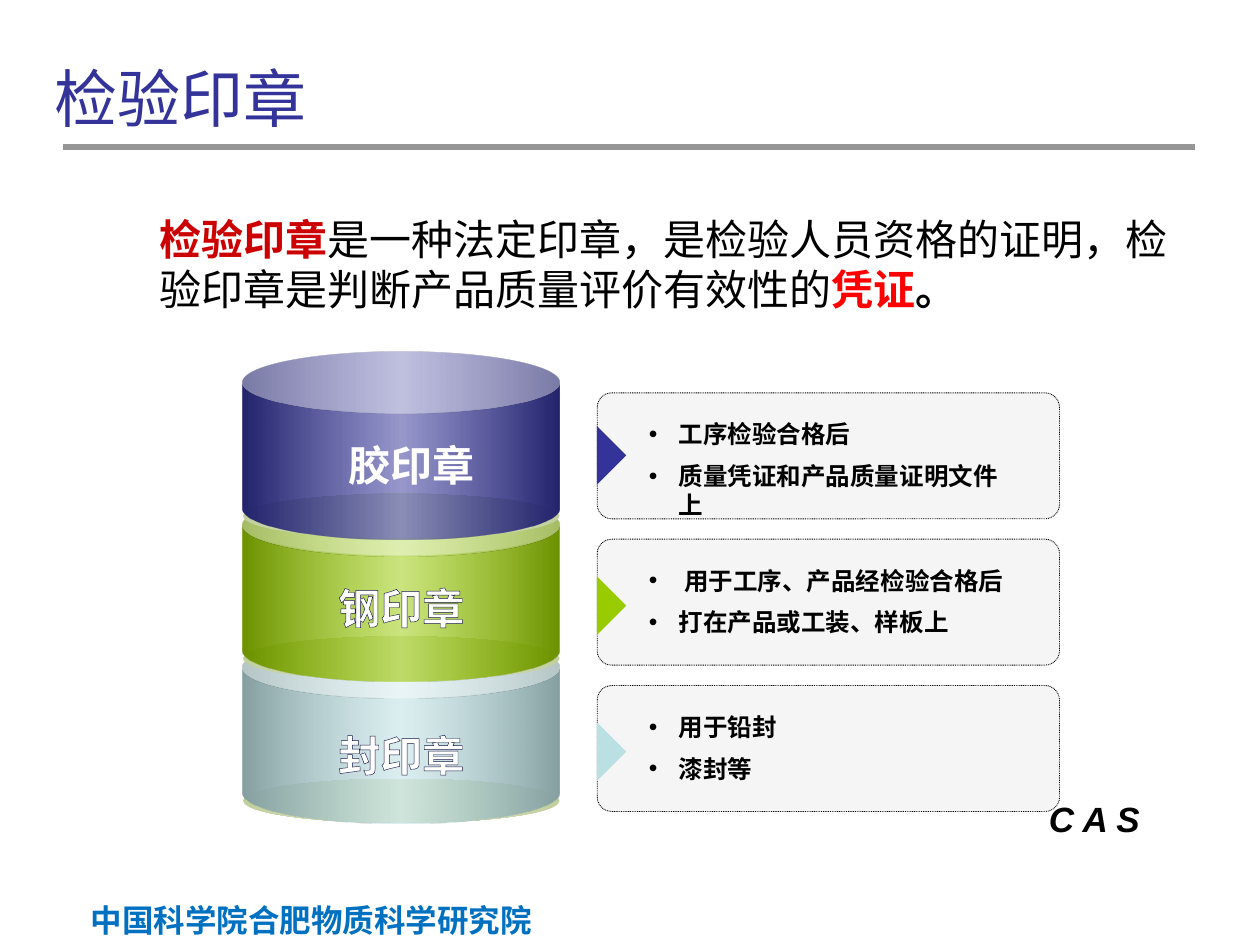
"""Build the slide on the three kinds of inspection stamp."""
from copy import deepcopy

from lxml import etree
from pptx import Presentation
from pptx import util as u
from pptx.dml.color import RGBColor
from pptx.enum import dml, shapes, text
from pptx.oxml.ns import qn

BLACK = RGBColor(0x00, 0x00, 0x00)
WHITE = RGBColor(0xFF, 0xFF, 0xFF)
GREY = RGBColor(0x96, 0x96, 0x96)
CARD = RGBColor(0x4D, 0x4D, 0x4D)
NAVY = RGBColor(0x33, 0x33, 0x99)
DARK_NAVY = RGBColor(0x24, 0x24, 0x6D)
OUTLINE = RGBColor(0x17, 0x17, 0x45)
GREEN = RGBColor(0x99, 0xCC, 0x00)
DARK_GREEN = RGBColor(0x6D, 0x92, 0x00)
ICE = RGBColor(0xBB, 0xE0, 0xE3)
DARK_ICE = RGBColor(0x86, 0xA0, 0xA2)
RIM = RGBColor(0xC1, 0xCF, 0x9D)
PALE_RIM = RGBColor(0xE5, 0xEB, 0xD5)
CRIMSON = RGBColor(0xCC, 0x00, 0x00)
RED = RGBColor(0xFF, 0x00, 0x00)
BLUE = RGBColor(0x00, 0x70, 0xC0)
CJK = "Noto Sans CJK SC"
TITLE_FONT = "Noto Sans CJK JP"


def add_run(paragraph, words, size=24, font="Arial", color=BLACK, bold=True,
            italic=False, outline=None):
    run = paragraph.add_run()
    run.text = words
    run.font.size, run.font.name = u.Pt(size), font
    run.font.bold, run.font.italic = bold, italic
    run.font.color.rgb = color
    props = run.font._element
    east_asian = etree.Element(qn("a:ea"), typeface=CJK if font == "Arial" else font)
    props.find(qn("a:latin")).addnext(east_asian)
    if outline is not None:
        edge = etree.Element(qn("a:ln"), w=str(u.Pt(0.75)))
        solid = etree.SubElement(edge, qn("a:solidFill"))
        etree.SubElement(solid, qn("a:srgbClr"), val=str(outline))
        props.insert(0, edge)


def set_alpha(color_element, percent):
    etree.SubElement(color_element, qn("a:alpha"), val=str(percent * 1000))


class StampSlide:
    def __init__(self, slide):
        self.slide = slide

    def text(self, left, top, width, height, paragraphs, align=text.PP_ALIGN.LEFT,
             bullet=False, wrap=True):
        box = self.slide.shapes.add_textbox(*map(u.Cm, (left, top, width, height)))
        frame = box.text_frame
        frame.word_wrap = wrap
        for index, runs in enumerate(paragraphs):
            paragraph = frame.add_paragraph() if index else frame.paragraphs[0]
            paragraph.alignment = align
            if index:
                paragraph.space_before = u.Pt(7)
            if bullet:
                props = paragraph._p.get_or_add_pPr()
                props.set("marL", str(u.Cm(0.6)))
                props.set("indent", str(u.Cm(-0.6)))
                etree.SubElement(props, qn("a:buFont"), typeface="Arial")
                etree.SubElement(props, qn("a:buChar"), char="•")
            for words, style in runs:
                add_run(paragraph, words, **style)

    def shape(self, kind, left, top, width, height, fill=None):
        shape = self.slide.shapes.add_shape(kind, *map(u.Cm, (left, top, width, height)))
        shape.shadow.inherit = False
        shape.line.fill.background()
        if fill is not None:
            shape.fill.solid()
            shape.fill.fore_color.rgb = fill
        return shape

    def gradient(self, shape, edge, middle, alpha=None):
        shape.fill.gradient()
        shape.fill.gradient_angle = 0
        stops = shape._element.spPr.find(qn("a:gradFill")).find(qn("a:gsLst"))
        stops.insert(1, deepcopy(stops[0]))
        for stop, position, color in zip(shape.fill.gradient_stops, (0, 0.5, 1),
                                         (edge, middle, edge)):
            stop.position = position
            stop.color.rgb = color
        if alpha:
            set_alpha(stops[1][0], alpha)

    def drum(self, top, edge, middle):
        left, width = 4.9, 6.38
        rim = self.shape(shapes.MSO_SHAPE.OVAL, left, top + 2.87, width, 0.89)
        self.gradient(rim, RIM, PALE_RIM)
        can = self.shape(shapes.MSO_SHAPE.CAN, left, top, width, 3.78)
        can.adjustments[0] = 0.332
        self.gradient(can, edge, middle, alpha=50)

    def card(self, top, notes):
        card = self.shape(shapes.MSO_SHAPE.ROUNDED_RECTANGLE, 12.04, top, 9.32, 2.54, CARD)
        card.adjustments[0] = 0.115
        set_alpha(card._element.spPr.find(qn("a:solidFill"))[0], 5)
        card.line.color.rgb = BLACK
        card.line.width = u.Pt(0.5)
        card.line.dash_style = dml.MSO_LINE.ROUND_DOT
        self.text(12.83, top + 0.41, 7.92, 1.75,
                  [[(note, dict(size=14))] for note in notes], bullet=True)

    def arrow(self, top, color):
        arrow = self.shape(shapes.MSO_SHAPE.RIGHT_TRIANGLE, 11.61, top, 0.84, 0.84, color)
        arrow.rotation = 225

    def rule(self, left, right, top):
        rule = self.slide.shapes.add_connector(
            shapes.MSO_CONNECTOR.STRAIGHT, *map(u.Cm, (left, top, right, top)))
        rule.line.color.rgb = GREY
        rule.line.width = u.Pt(3.6)
        etree.SubElement(rule._element.spPr, qn("a:effectLst"))


def main():
    deck = Presentation()
    deck.slide_width, deck.slide_height = u.Cm(25.4), u.Cm(19.05)
    page = StampSlide(deck.slides.add_slide(deck.slide_layouts[6]))

    page.rule(1.27, 24.08, 2.97)
    page.text(1.5, 18.03, 9.47, 1.02,
              [[("中国科学院合肥物质科学研究院", dict(size=18, color=BLUE))]],
              align=text.PP_ALIGN.RIGHT)
    page.text(20.7, 15.95, 2.59, 1.09, [[(" C A S", dict(size=20, italic=True))]],
              wrap=False)
    page.text(0.84, 1.07, 22.86, 3.18,
              [[("检验印章", dict(size=36, font=TITLE_FONT, color=NAVY, bold=False))]])
    page.text(2.97, 4.17, 20.96, 2.31, [[
        ("检验印章", dict(font=CJK, color=CRIMSON)),
        ("是一种法定印章，是检验人员资格的证明，检验印章是判断产品质量评价有效性的",
         dict(font=CJK, bold=False)),
        ("凭证", dict(font=CJK, color=RED)),
        ("。", dict()),
    ]])

    stamps = [
        ("胶印章", DARK_NAVY, NAVY, None, 5.33, 8.74, 8.76,
         ["工序检验合格后", "质量凭证和产品质量证明文件上"]),
        ("钢印章", DARK_GREEN, GREEN, OUTLINE, 5.13, 11.61, 11.79,
         [" 用于工序、产品经检验合格后", "打在产品或工装、样板上"]),
        ("封印章", DARK_ICE, ICE, OUTLINE, 5.13, 14.58, 14.73,
         ["用于铅封", "漆封等"]),
    ]
    for row, (_, edge, middle, *_) in reversed(list(enumerate(stamps))):
        page.drum(7.09 + row * 2.87, edge, middle)
    for row, (name, _, color, outline, left, label_top, arrow_top, notes) in enumerate(stamps):
        page.card(7.92 + row * 2.95, notes)
        page.text(left, label_top, 5.92, 1.27,
                  [[(name, dict(color=WHITE, outline=outline))]],
                  align=text.PP_ALIGN.CENTER)
        page.arrow(arrow_top, color)

    deck.save("out.pptx")


if __name__ == "__main__":
    main()
